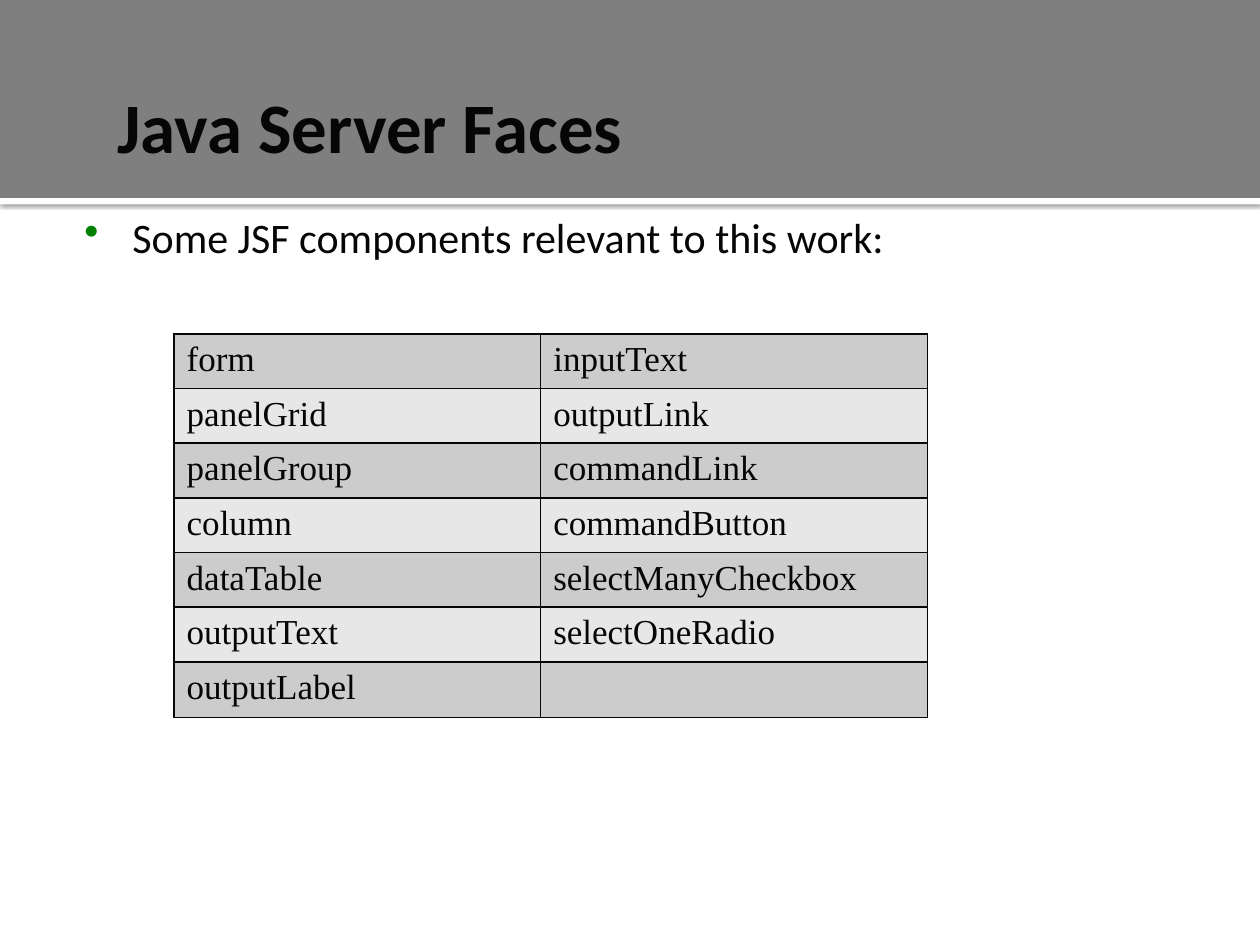
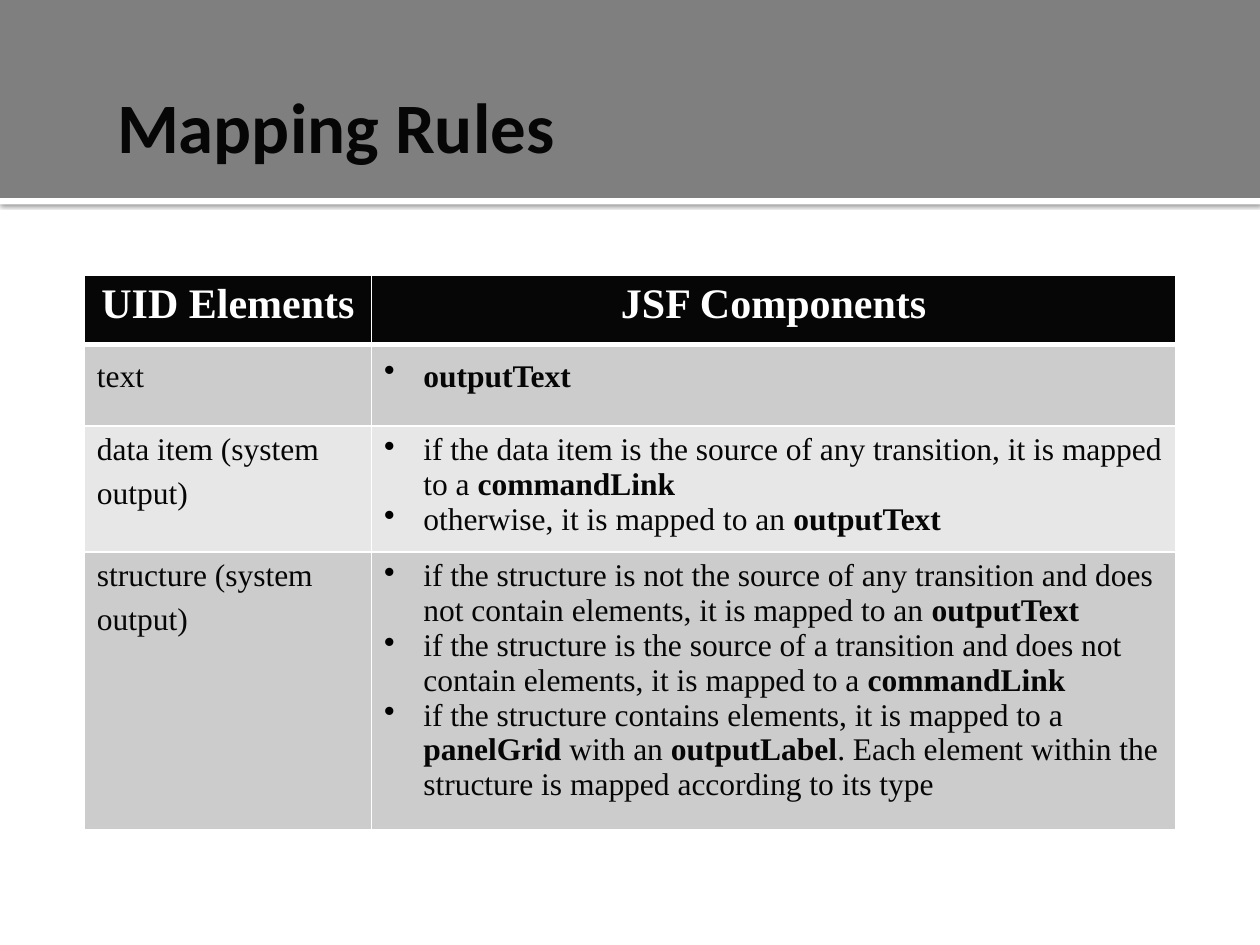
import dataclasses

import lxml.etree
import pptx
import pptx.dml.color
import pptx.enum.shapes
import pptx.enum.text
import pptx.oxml.ns
import pptx.util

Cm = pptx.util.Cm
Pt = pptx.util.Pt
Align = pptx.enum.text.PP_ALIGN
Anchor = pptx.enum.text.MSO_ANCHOR


@dataclasses.dataclass(frozen=True)
class Theme:
    white: str = "FFFFFF"
    ink: str = "060606"
    band: str = "7F7F7F"
    shadow: str = "000000"
    table_bullet: str = "000000"
    body_bullet: str = "008000"
    row_fills: tuple = ("CCCCCC", "E7E7E7")
    sans: str = "Calibri"
    serif: str = "Times New Roman"
    title_size: float = 40.5
    large_size: float = 24
    component_size: float = 20
    rule_size: float = 18


THEME = Theme()
WIDTH, HEIGHT = 25.4, 19.05
BAND_HEIGHT, STRIPE_HEIGHT = 3.99, 0.13
TITLE_BOX = (2.11, 1.47, 22.43, 2.11)
BODY_BOX = (1.55, 4.01, 23.01, 14)

COMPONENTS = [
    ("form", "inputText"),
    ("panelGrid", "outputLink"),
    ("panelGroup", "commandLink"),
    ("column", "commandButton"),
    ("dataTable", "selectManyCheckbox"),
    ("outputText", "selectOneRadio"),
    ("outputLabel", ""),
]
RULE_HEADINGS = ("UID Elements", "JSF Components")
RULES = [
    ("text", ["*outputText*"]),
    ("data item (system output)", [
        "if the data item is the source of any transition, it is mapped to a *commandLink*",
        "otherwise, it is mapped to an *outputText*",
    ]),
    ("structure (system output)", [
        "if the structure is not the source of any transition and does not contain elements, "
        "it is mapped to an *outputText*",
        "if the structure is the source of a transition and does not contain elements, "
        "it is mapped to a *commandLink*",
        "if the structure contains elements, it is mapped to a *panelGrid* with an *outputLabel*. "
        "Each element within the structure is mapped according to its type",
    ]),
]


def rgb(color):
    return pptx.dml.color.RGBColor.from_string(color)


def add_xml(parent, tag, **attributes):
    values = {key: str(value) for key, value in attributes.items()}
    return lxml.etree.SubElement(parent, pptx.oxml.ns.qn(tag), values)


def write(frame, text, *, size, font=THEME.serif, color=THEME.ink, bold=False, align=None,
          bullet=None, indent=0, before=None, tail_size=None):
    """Fill a frame with one paragraph per line; asterisks enclose bold words."""
    for index, line in enumerate(text.split("\n")):
        paragraph = frame.add_paragraph() if index else frame.paragraphs[0]
        paragraph.alignment = align
        if before is not None:
            paragraph.space_before = Pt(before)
        if bullet:
            properties = paragraph._p.get_or_add_pPr()
            properties.set("marL", str(Cm(indent)))
            properties.set("indent", str(-Cm(indent)))
            add_xml(add_xml(properties, "a:buClr"), "a:srgbClr", val=bullet)
            add_xml(properties, "a:buChar", char="•")
        pieces = [(part, size, bold or position % 2 == 1)
                  for position, part in enumerate(line.split("*")) if part]
        if tail_size:
            pieces.append((" ", tail_size, False))
        for part, part_size, is_bold in pieces:
            run = paragraph.add_run()
            run.text = part
            run.font.name = font
            run.font.size = Pt(part_size)
            run.font.bold = is_bold
            run.font.color.rgb = rgb(color)


def add_text(slide, box, text, insets, anchor=Anchor.TOP, **style):
    frame = slide.shapes.add_textbox(*map(Cm, box)).text_frame
    frame.word_wrap = True
    frame.vertical_anchor = anchor
    (frame.margin_left, frame.margin_top,
     frame.margin_right, frame.margin_bottom) = map(Cm, insets)
    write(frame, text, **style)


def add_bar(slide, box, color):
    bar = slide.shapes.add_shape(pptx.enum.shapes.MSO_SHAPE.RECTANGLE, *map(Cm, box))
    bar.shadow.inherit = False
    bar.fill.solid()
    bar.fill.fore_color.rgb = rgb(color)
    bar.line.fill.background()
    return bar


def add_header(slide, title):
    stripe = add_bar(slide, (0, BAND_HEIGHT, WIDTH, STRIPE_HEIGHT), THEME.white)
    effects = stripe._element.spPr.find(pptx.oxml.ns.qn("a:effectLst"))
    shadow = add_xml(effects, "a:outerShdw", blurRad=Pt(2.5), dist=Pt(0.8),
                     dir=90 * 60000, algn="tl", rotWithShape=0)
    shade = add_xml(shadow, "a:srgbClr", val=THEME.shadow)
    add_xml(shade, "a:alpha", val=60000)
    add_bar(slide, (0, 0, WIDTH, BAND_HEIGHT), THEME.band)
    add_text(slide, TITLE_BOX, title, (0.25, 0.13, 0.13, 0.13), Anchor.MIDDLE,
             size=THEME.title_size, font=THEME.sans, bold=True)


def style_cell(cell, fill, border, top=1, bottom=1):
    properties = cell._tc.get_or_add_tcPr()
    for side, width in (("L", 1), ("R", 1), ("T", top), ("B", bottom)):
        edge = add_xml(properties, f"a:ln{side}", w=Pt(width))
        add_xml(add_xml(edge, "a:solidFill"), "a:srgbClr", val=border)
    cell.fill.solid()
    cell.fill.fore_color.rgb = rgb(fill)


def add_grid(slide, left, top, widths, heights):
    grid = slide.shapes.add_table(len(heights), len(widths), Cm(left), Cm(top),
                                  Cm(sum(widths)), Cm(sum(heights))).table
    grid.first_row = grid.horz_banding = False
    for column, width in zip(grid.columns, widths):
        column.width = Cm(width)
    for row, height in zip(grid.rows, heights):
        row.height = Cm(height)
    return grid


def add_component_table(slide, left, top):
    grid = add_grid(slide, left, top, (7.39, 7.8), [1.04] * 6 + [1.12])
    for row, names in enumerate(COMPONENTS):
        for column, name in enumerate(names):
            cell = grid.cell(row, column)
            style_cell(cell, THEME.row_fills[row % 2], THEME.ink)
            write(cell.text_frame, name, size=THEME.component_size)


def add_rule_table(slide, left, top):
    grid = add_grid(slide, left, top, (5.79, 16.21), (1.4, 1.65, 2.36, 5.14))
    for column, heading in enumerate(RULE_HEADINGS):
        cell = grid.cell(0, column)
        style_cell(cell, THEME.ink, THEME.white, bottom=3)
        write(cell.text_frame, heading, size=THEME.large_size, color=THEME.white,
              bold=True, align=Align.CENTER)
    for row, (element, mappings) in enumerate(RULES, start=1):
        element_cell, mapping_cell = grid.cell(row, 0), grid.cell(row, 1)
        for cell in (element_cell, mapping_cell):
            style_cell(cell, THEME.row_fills[(row - 1) % 2], THEME.white,
                       top=3 if row == 1 else 1)
        write(element_cell.text_frame, element, size=THEME.rule_size,
              tail_size=THEME.large_size)
        write(mapping_cell.text_frame, "\n".join(mappings), size=THEME.rule_size,
              bullet=THEME.table_bullet, indent=0.79,
              tail_size=THEME.large_size if row == 1 else None)


def add_slide(deck, title):
    slide = deck.slides.add_slide(deck.slide_layouts[6])
    slide.background.fill.solid()
    slide.background.fill.fore_color.rgb = rgb(THEME.white)
    add_header(slide, title)
    return slide


def build_components_slide(deck):
    slide = add_slide(deck, "Java Server Faces")
    add_text(slide, BODY_BOX, "Some JSF components relevant to this work:",
             (0.15, 0.25, 0.25, 0.13), size=THEME.large_size, font=THEME.sans,
             bullet=THEME.body_bullet, indent=0.97, before=15)
    add_component_table(slide, 3.51, 6.73)


def build_rules_slide(deck):
    slide = add_slide(deck, "Mapping Rules")
    add_rule_table(slide, 1.7, 5.54)


def main():
    deck = pptx.Presentation()
    deck.slide_width, deck.slide_height = Cm(WIDTH), Cm(HEIGHT)
    build_components_slide(deck)
    build_rules_slide(deck)
    deck.save("out.pptx")


if __name__ == "__main__":
    main()
